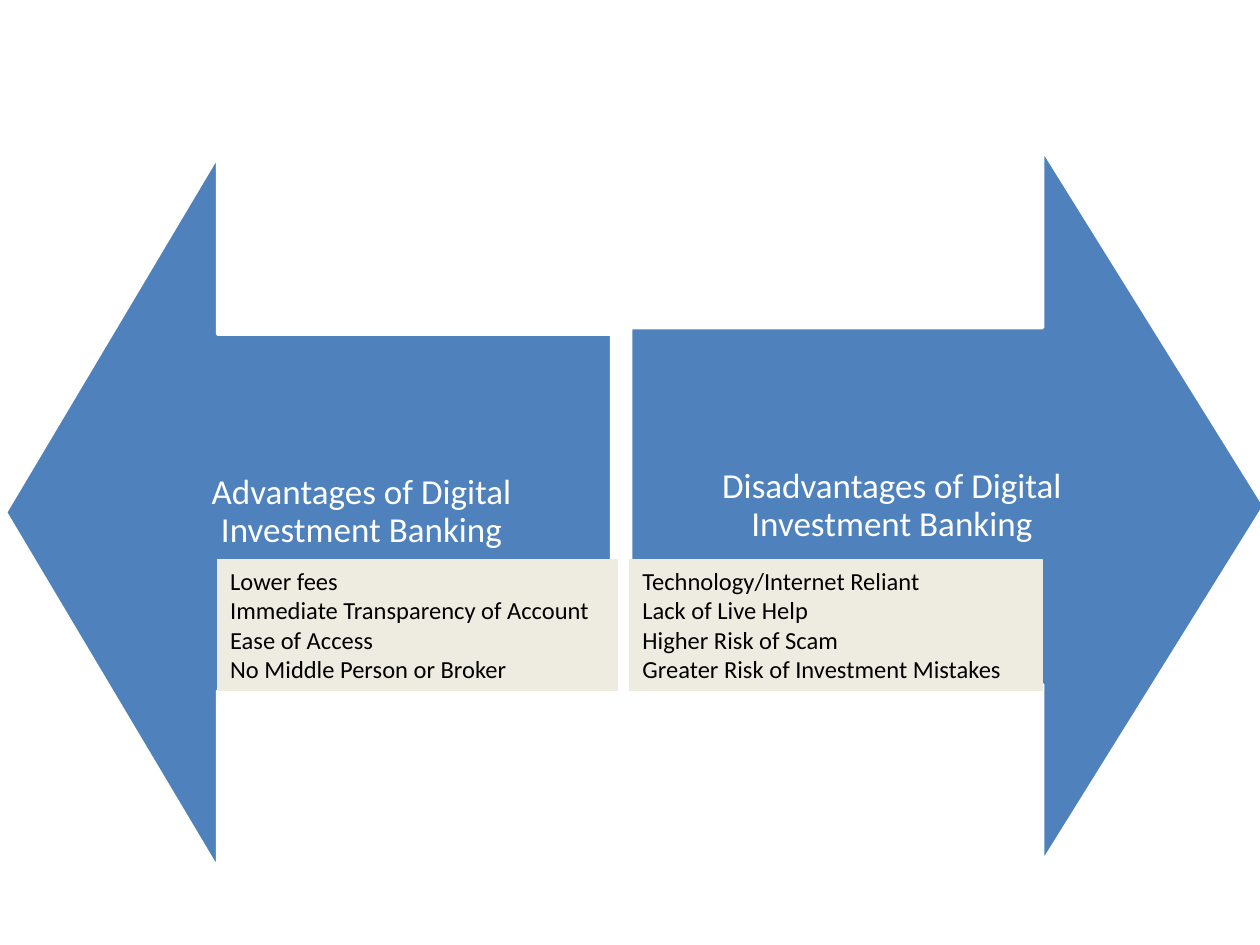
from pptx import Presentation
from pptx.dml.color import RGBColor
from pptx.enum.shapes import MSO_SHAPE
from pptx.enum.text import MSO_ANCHOR, MSO_AUTO_SIZE, PP_ALIGN
from pptx.util import Cm, Pt

BLUE, CREAM, WHITE, BLACK = "4F81BD", "EEECE1", "FFFFFF", "000000"
HEAD_RATIO = 0.35  # arrowhead length as a share of the arrow's length
CARD_TOP, CARD_HEIGHT = 11.28, 2.64


def color(value):
    return RGBColor.from_string(value)


def style_shape(shape, fill, line, line_width):
    shape.shadow.inherit = False
    shape.fill.solid()
    shape.fill.fore_color.rgb = color(fill)
    shape.line.color.rgb = color(line)
    shape.line.width = Pt(line_width)


def write_text(shape, lines, size, font_color, align=PP_ALIGN.LEFT,
               anchor=MSO_ANCHOR.TOP, inset=None, line_spacing=None,
               auto_size=MSO_AUTO_SIZE.NONE):
    frame = shape.text_frame
    frame.word_wrap = True
    frame.auto_size = auto_size
    frame.vertical_anchor = anchor
    if inset is not None:
        frame.margin_left = frame.margin_right = Cm(inset)
        frame.margin_top = frame.margin_bottom = Cm(inset)
    for index, line in enumerate(lines):
        paragraph = frame.paragraphs[0] if index == 0 else frame.add_paragraph()
        paragraph.alignment = align
        if line_spacing is not None:
            paragraph.line_spacing = line_spacing
        run = paragraph.add_run()
        run.text = line
        run.font.name = "Calibri"
        run.font.size = Pt(size)
        run.font.color.rgb = color(font_color)


def add_arrow(slide, left, top, width, height, title, points_left):
    # An up arrow turned sideways about the centre of its box
    arrow = slide.shapes.add_shape(
        MSO_SHAPE.UP_ARROW,
        Cm(left + (width - height) / 2), Cm(top + (height - width) / 2),
        Cm(height), Cm(width))
    arrow.rotation = 270 if points_left else 90
    arrow.adjustments[0] = 0.5
    arrow.adjustments[1] = HEAD_RATIO
    style_shape(arrow, BLUE, WHITE, 2)

    # The title fills the shaft and half of the head
    half_head = width * HEAD_RATIO / 2
    label = slide.shapes.add_textbox(
        Cm(left + half_head if points_left else left), Cm(top + height / 4),
        Cm(width - half_head), Cm(height / 2))
    write_text(label, [title], size=20, font_color=WHITE, align=PP_ALIGN.CENTER,
               anchor=MSO_ANCHOR.MIDDLE, inset=0.4, line_spacing=0.9)


def add_card(slide, left, top, width, height, points):
    card = slide.shapes.add_shape(
        MSO_SHAPE.RECTANGLE, Cm(left), Cm(top), Cm(width), Cm(height))
    style_shape(card, CREAM, CREAM, 0.75)
    write_text(card, points, size=14, font_color=BLACK,
               auto_size=MSO_AUTO_SIZE.SHAPE_TO_FIT_TEXT)


def main():
    presentation = Presentation()
    presentation.slide_width = Cm(25.4)
    presentation.slide_height = Cm(19.05)
    slide = presentation.slides.add_slide(presentation.slide_layouts[6])

    # Opposing arrows
    add_arrow(slide, 0.11, 3.14, 12.22, 14.38,
              "Advantages of Digital Investment Banking", points_left=True)
    add_arrow(slide, 12.71, 3.01, 12.78, 14.38,
              "Disadvantages of Digital Investment Banking", points_left=False)

    # Lists of points
    add_card(slide, 4.39, CARD_TOP, 8.05, CARD_HEIGHT, [
        "Lower fees",
        "Immediate Transparency of Account",
        "Ease of Access",
        "No Middle Person or Broker",
    ])
    add_card(slide, 12.7, CARD_TOP, 8.31, CARD_HEIGHT, [
        "Technology/Internet Reliant",
        "Lack of Live Help",
        "Higher Risk of Scam",
        "Greater Risk of Investment Mistakes",
    ])

    presentation.save("out.pptx")


if __name__ == "__main__":
    main()
